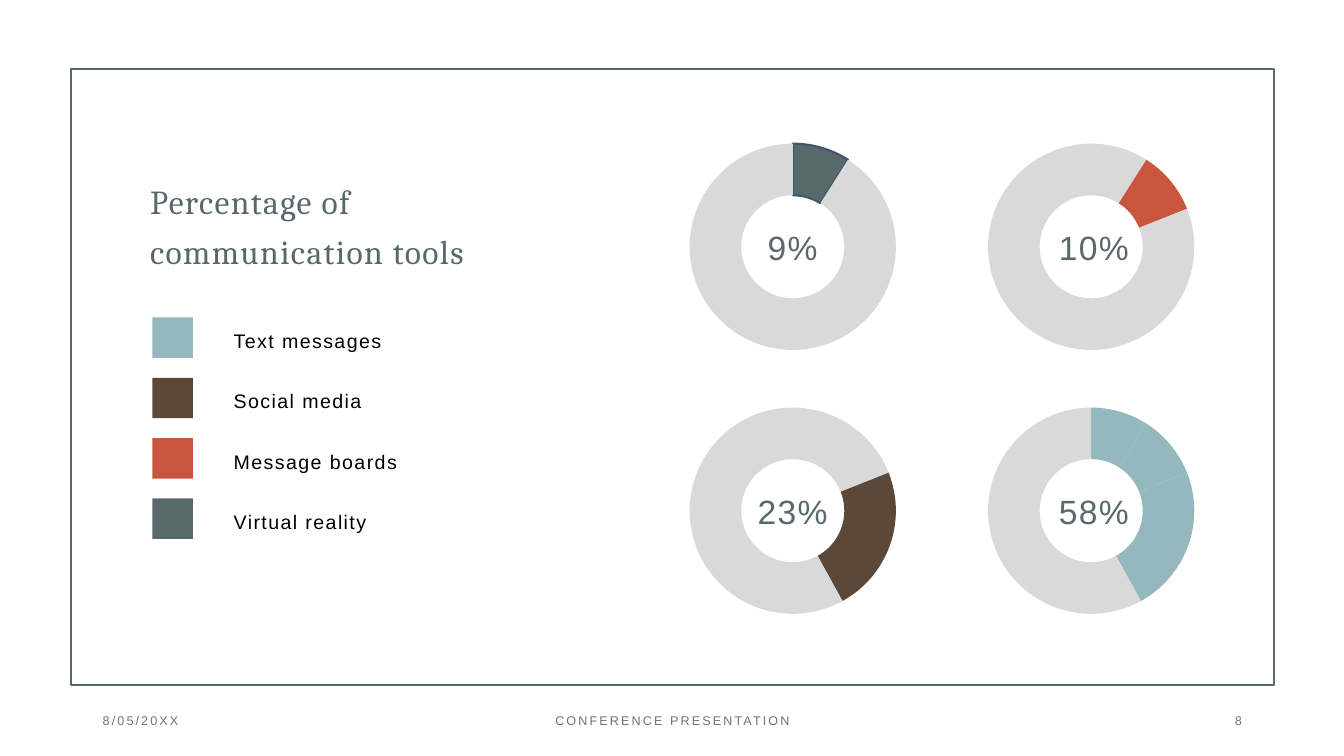
from dataclasses import dataclass

from pptx import Presentation
from pptx.chart.data import CategoryChartData
from pptx.dml.color import RGBColor
from pptx.enum.chart import XL_CHART_TYPE
from pptx.enum.shapes import MSO_SHAPE
from pptx.enum.text import MSO_ANCHOR, MSO_AUTO_SIZE, PP_ALIGN
from pptx.oxml import parse_xml
from pptx.oxml.ns import nsdecls, qn
from pptx.shapes.autoshape import Shape
from pptx.slide import Slide
from pptx.util import Cm, Pt

DOUGHNUT = XL_CHART_TYPE.DOUGHNUT
RECTANGLE = MSO_SHAPE.RECTANGLE
TOP, MIDDLE = MSO_ANCHOR.TOP, MSO_ANCHOR.MIDDLE
LEFT, CENTER, RIGHT = PP_ALIGN.LEFT, PP_ALIGN.CENTER, PP_ALIGN.RIGHT
NO_AUTOFIT = MSO_AUTO_SIZE.NONE

SLATE = RGBColor(0x58, 0x69, 0x6B)
BLUE = RGBColor(0x95, 0xB8, 0xBF)
BROWN = RGBColor(0x5B, 0x48, 0x39)
RED = RGBColor(0xCA, 0x55, 0x3E)
LIGHT_GRAY = RGBColor(0xD9, 0xD9, 0xD9)
FOOTER_GRAY = RGBColor(0x76, 0x71, 0x71)
NAVY = RGBColor(0x44, 0x54, 0x6A)
BLACK = RGBColor(0, 0, 0)

SHARES = (9, 10, 23, 58)
LEGEND_PITCH = 1.52
ROW_PITCH = 6.65


@dataclass(frozen=True)
class TextStyle:
    font: dict
    spacing: int  # hundredths of a point
    line_spacing: float = 1.0
    alignment: PP_ALIGN = LEFT
    anchor: MSO_ANCHOR = MIDDLE


@dataclass(frozen=True)
class LegendEntry:
    label: str
    color: RGBColor


@dataclass(frozen=True)
class Ring:
    column: int
    row: int
    label: str
    colors: tuple[RGBColor, ...]
    outlined: bool = False


@dataclass(frozen=True)
class FooterItem:
    left: float
    width: float
    text: str
    alignment: PP_ALIGN


TITLE_FONT = {"name": "Cambria", "size": Pt(24)}
LABEL_FONT = {"name": "Arial", "size": Pt(14)}
PERCENT_FONT = {"name": "Arial", "size": Pt(24)}
FOOTER_FONT = {"name": "Arial", "size": Pt(9)}
CHART_FONT = {"name": "Arial", "size": Pt(10)}

LEGEND = (
    LegendEntry("Text messages", BLUE),
    LegendEntry("Social media", BROWN),
    LegendEntry("Message boards", RED),
    LegendEntry("Virtual reality", SLATE),
)
RINGS = (
    Ring(0, 0, "9%", (SLATE, LIGHT_GRAY, LIGHT_GRAY, LIGHT_GRAY), outlined=True),
    Ring(1, 0, "10%", (LIGHT_GRAY, RED, LIGHT_GRAY, LIGHT_GRAY)),
    Ring(0, 1, "23%", (LIGHT_GRAY, LIGHT_GRAY, BROWN, LIGHT_GRAY)),
    Ring(1, 1, "58%", (BLUE, BLUE, BLUE, LIGHT_GRAY)),
)
FOOTER = (
    FooterItem(2.34, 7.62, "8/05/20XX", LEFT),
    FooterItem(11.23, 11.43, "CONFERENCE PRESENTATION", CENTER),
    FooterItem(23.93, 7.62, "8", RIGHT),
)


def write_text(shape: Shape, text: str, style: TextStyle, color: RGBColor) -> None:
    frame = shape.text_frame
    frame_format = {"word_wrap": True, "auto_size": NO_AUTOFIT, "vertical_anchor": style.anchor}
    for name, value in frame_format.items():
        setattr(frame, name, value)
    paragraph = frame.paragraphs[0]
    paragraph.alignment = style.alignment
    paragraph.line_spacing = style.line_spacing
    run = paragraph.add_run()
    run.text = text
    for name, value in style.font.items():
        setattr(run.font, name, value)
    run.font.color.rgb = color
    run._r.get_or_add_rPr().set("spc", str(style.spacing))


def add_text(slide: Slide, box: tuple[float, ...], text: str,
             style: TextStyle, color: RGBColor) -> None:
    shape = slide.shapes.add_textbox(*(Cm(length) for length in box))
    write_text(shape, text, style, color)


def add_rectangle(slide: Slide, box: tuple[float, ...]) -> Shape:
    shape = slide.shapes.add_shape(RECTANGLE, *(Cm(length) for length in box))
    shape.shadow.inherit = False
    return shape


def add_frame(slide: Slide) -> None:
    frame = add_rectangle(slide, (1.78, 1.75, 30.33, 15.52))
    frame.fill.background()
    frame.line.color.rgb = SLATE
    frame.line.width = Pt(1.5)


def add_title(slide: Slide) -> None:
    title = slide.shapes.title
    position = {"left": 3.53, "top": 3.81, "width": 11.33, "height": 3.53}
    for name, value in position.items():
        setattr(title, name, Cm(value))
    style = TextStyle(TITLE_FONT, 100, 1.25)
    write_text(title, "Percentage of communication tools", style, SLATE)


def add_legend_entry(slide: Slide, index: int, entry: LegendEntry) -> None:
    offset = index * LEGEND_PITCH
    swatch = add_rectangle(slide, (3.84, 8 + offset, 1.02, 1.02))
    swatch.fill.solid()
    swatch.fill.fore_color.rgb = entry.color
    swatch.line.fill.background()
    style = TextStyle(LABEL_FONT, 100, 1.5, anchor=TOP)
    add_text(slide, (5.64, 7.87 + offset, 4.95, 1.19), entry.label, style, BLACK)


def add_ring(slide: Slide, ring: Ring) -> None:
    data = CategoryChartData()
    data.categories = [str(number) for number in range(1, len(SHARES) + 1)]
    data.add_series("Series 1", SHARES)
    box = (15.6 + ring.column * 7.52, 3.33 + ring.row * ROW_PITCH, 8.76, 5.84)
    chart = slide.shapes.add_chart(DOUGHNUT, *(Cm(length) for length in box), data).chart
    chart.has_legend = False
    chart.has_title = False
    for name, value in CHART_FONT.items():
        setattr(chart.font, name, value)
    chart.font.color.rgb = BLACK

    plot = chart.plots[0]
    plot.vary_by_categories = True
    for index, color in enumerate(ring.colors):
        slice_format = plot.series[0].points[index].format
        slice_format.fill.solid()
        slice_format.fill.fore_color.rgb = color
        slice_format.line.fill.background()
    if ring.outlined:
        outline = plot.series[0].points[0].format.line
        outline.color.rgb = NAVY
        outline.width = Pt(1.5)

    # Hole size and plot area
    doughnut = plot._element
    doughnut.find(qn("c:holeSize")).set("val", "75")
    plot_area = doughnut.getparent()
    for layout in plot_area.findall(qn("c:layout")):
        plot_area.remove(layout)
    bounds = {"x": 0.2, "y": 0.05, "w": 0.6, "h": 0.89}
    modes = '<c:layoutTarget val="inner"/><c:xMode val="edge"/><c:yMode val="edge"/>'
    values = "".join(f'<c:{name} val="{value}"/>' for name, value in bounds.items())
    plot_area.insert(0, parse_xml(
        f'<c:layout {nsdecls("c")}><c:manualLayout>{modes}{values}</c:manualLayout></c:layout>'))


def add_percentage(slide: Slide, ring: Ring) -> None:
    box = (17.5 + ring.column * 7.59, 3.63 + ring.row * ROW_PITCH, 4.95, 4.95)
    add_text(slide, box, ring.label, TextStyle(PERCENT_FONT, 100, 1.25, CENTER), SLATE)


def main() -> None:
    presentation = Presentation()
    presentation.slide_width = Cm(33.87)
    presentation.slide_height = Cm(19.05)
    slide = presentation.slides.add_slide(presentation.slide_layouts[5])

    # Frame and title
    add_frame(slide)
    add_title(slide)

    # Legend
    for index, entry in enumerate(LEGEND):
        add_legend_entry(slide, index, entry)

    # Rings with their percentages on top
    for ring in RINGS:
        add_ring(slide, ring)
    for ring in RINGS:
        add_percentage(slide, ring)

    # Footer
    for item in FOOTER:
        style = TextStyle(FOOTER_FONT, 150, alignment=item.alignment)
        add_text(slide, (item.left, 17.65, item.width, 1.02), item.text, style, FOOTER_GRAY)

    presentation.save("out.pptx")


if __name__ == "__main__":
    main()
